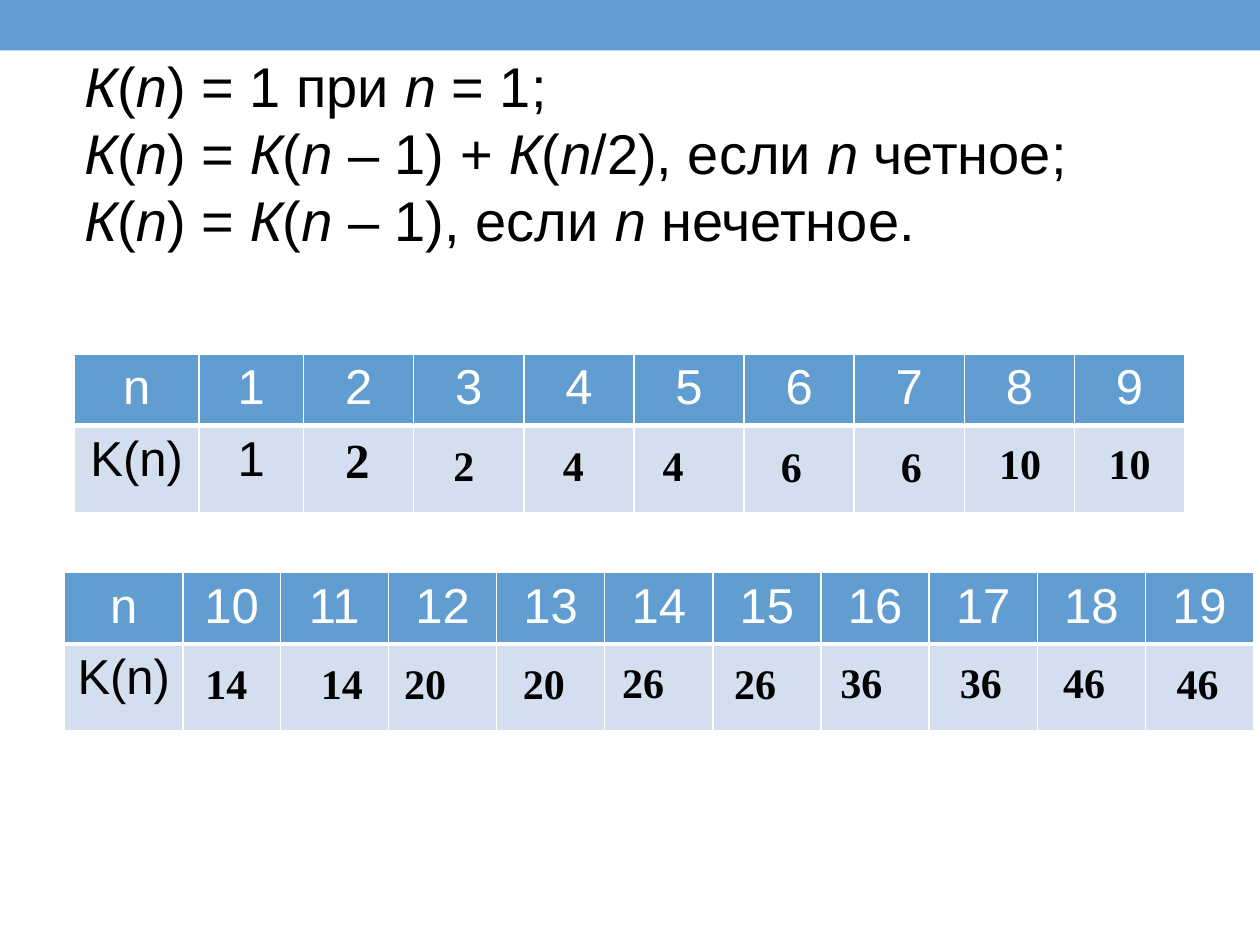
"""Build a slide with a recurrence for K(n) and two tables of its values."""
from lxml.etree import SubElement
from pptx import Presentation
from pptx.dml.color import RGBColor
from pptx.enum.shapes import MSO_SHAPE as Shape
from pptx.enum.text import PP_ALIGN as Align
from pptx.oxml.ns import qn
from pptx.util import Cm, Pt

COLORS = {"blue": "629DD1", "pale": "D3DFEE", "white": "FFFFFF", "black": "000000"}
TABLES = [
    {"left": 1.5, "top": 7.14, "widths": [2.51, 2.11] + [2.22] * 8,
     "header": ["n", *range(1, 10)], "values": ["K(n)", 1]},
    {"left": 1.3, "top": 11.54, "widths": [2.39, 1.96] + [2.18] * 9,
     "header": ["n", *range(10, 20)], "values": ["K(n)"]},
]
ANSWERS = [
    (6.71, 8.53, 1.2, 2, 28), (8.89, 8.74, 1.2, 2, 24), (11.1, 8.74, 1.2, 4, 24),
    (13.11, 8.74, 1.2, 4, 24), (15.49, 8.76, 1.2, 6, 24), (17.91, 8.76, 1.2, 6, 24),
    (19.89, 8.69, 1.6, 10, 24), (22.1, 8.69, 1.4, 10, 24),
    (3.89, 13.13, 1.6, 14, 24), (6.22, 13.13, 1.6, 14, 24), (7.9, 13.13, 1.6, 20, 24),
    (10.29, 13.13, 1.6, 20, 24), (12.29, 13.11, 1.6, 26, 24), (14.55, 13.13, 1.6, 26, 24),
    (16.69, 13.11, 1.6, 36, 24), (19.1, 13.11, 1.6, 36, 24), (21.18, 13.11, 1.6, 46, 24),
    (23.47, 13.13, 1.6, 46, 24),
]
FORMULAS = [
    "*К*(*n*) = 1 при *n* = 1;",
    "*К*(*n*) = *К*(*n* – 1) + *К*(*n*/2), если *n* четное;",
    "*К*(*n*) = *К*(*n* – 1), если *n* нечетное.",
]


def add_run(paragraph, text, color, **formats):
    run = paragraph.add_run()
    run.text = str(text)
    run.font.color.rgb = RGBColor.from_string(COLORS[color])
    for name, value in formats.items():
        setattr(run.font, name, value)


def style_cell(cell, fill, bottom_width):
    properties = cell._tc.get_or_add_tcPr()
    for tag, width in {"a:lnL": 1, "a:lnR": 1, "a:lnT": 1, "a:lnB": bottom_width}.items():
        line = SubElement(properties, qn(tag), w=str(Pt(width)))
        SubElement(SubElement(line, qn("a:solidFill")), qn("a:srgbClr"), val=COLORS["white"])
    cell.fill.solid()
    cell.fill.fore_color.rgb = RGBColor.from_string(COLORS[fill])


presentation = Presentation()
presentation.slide_width, presentation.slide_height = Cm(25.4), Cm(19.05)
slide = presentation.slides.add_slide(presentation.slide_layouts[6])

bar = slide.shapes.add_shape(Shape.RECTANGLE, 0, 0, Cm(25.4), Cm(1.02))
bar.shadow.inherit = False
bar.fill.solid()
bar.fill.fore_color.rgb = RGBColor.from_string(COLORS["blue"])
bar.line.fill.background()

for data in TABLES:
    widths = data["widths"]
    table = slide.shapes.add_table(2, len(widths), Cm(data["left"]), Cm(data["top"]),
                                   Cm(sum(widths)), Cm(3.19)).table
    for column, width in zip(table.columns, widths):
        column.width = Cm(width)
    rows = [("header", 1.44, "blue", "white", 3), ("values", 1.75, "pale", "black", 1)]
    for row, (key, height, fill, color, bottom_width) in zip(table.rows, rows):
        row.height = Cm(height)
        for cell in row.cells:
            style_cell(cell, fill, bottom_width)
        for cell, text in zip(row.cells, data[key]):
            paragraph = cell.text_frame.paragraphs[0]
            paragraph.alignment = Align.CENTER
            add_run(paragraph, text, color, name="Arial", size=Pt(28), bold=False)

for left, top, width, value, size in ANSWERS:
    box = slide.shapes.add_textbox(Cm(left), Cm(top), Cm(width), Cm(1.28 if size == 24 else 1.45))
    box.text_frame.word_wrap = True
    add_run(box.text_frame.paragraphs[0], value, "black",
            name="Times New Roman", size=Pt(size), bold=True)

formula_box = slide.shapes.add_textbox(Cm(1.45), Cm(0.91), Cm(21.84), Cm(4.37))
frame = formula_box.text_frame
frame.word_wrap = True
for index, formula in enumerate(FORMULAS):
    paragraph = frame.add_paragraph() if index else frame.paragraphs[0]
    for position, part in enumerate(formula.split("*")):
        if part:
            add_run(paragraph, part, "black", name="Arial", size=Pt(32), italic=position % 2 == 1)

presentation.save("out.pptx")
